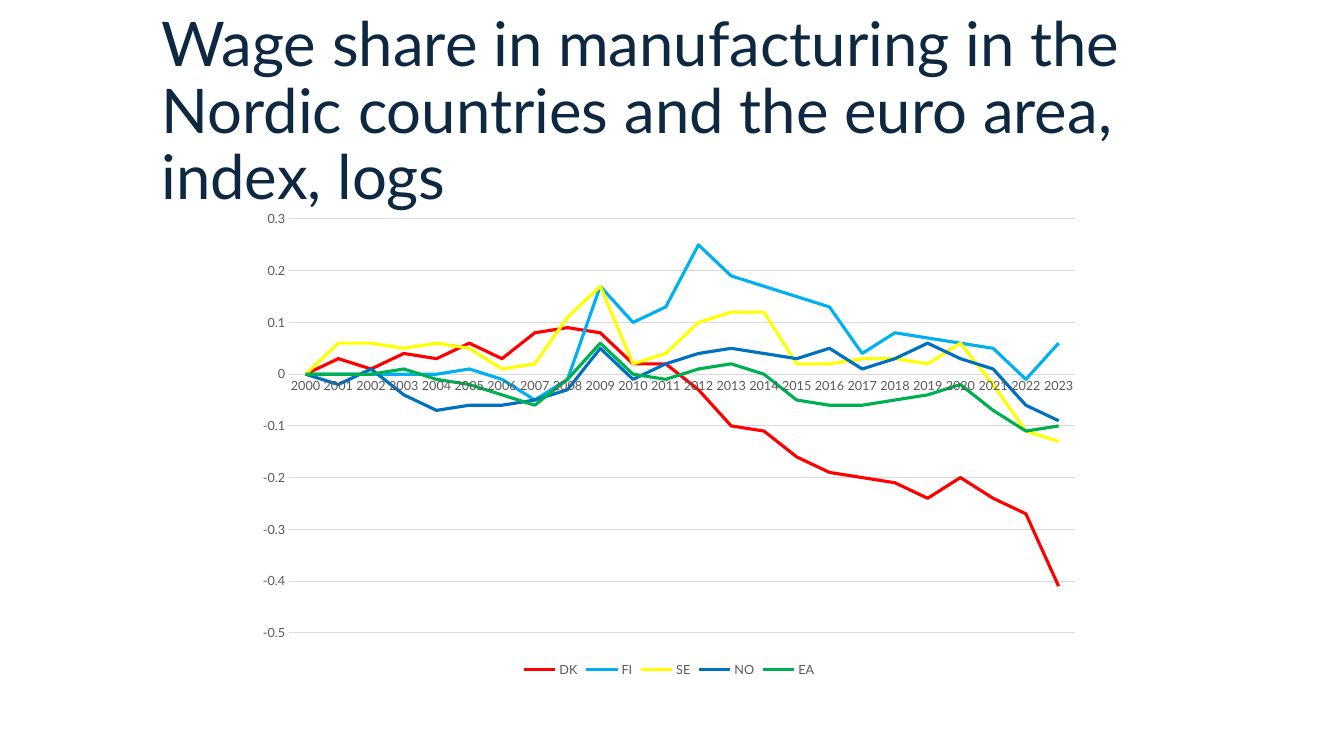
from pptx import Presentation
from pptx.chart import data
from pptx.dml.color import RGBColor
from pptx.enum import chart as kinds, text
from pptx.util import Inches, Pt

HEADING = "Wage share in manufacturing in the Nordic countries and the euro area, index, logs"
HEADING_BOX = (1.5, 0.4, 10.92, 1.45)
WAGE_BOX = (2.44, 2, 8.39, 4.76)
FONT = "Lato"
NAVY, GREY, PALE = "0E2841", "595959", "D9D9D9"

YEARS = [str(year) for year in range(2000, 2024)]
COUNTRIES = [
    ("DK", "FF0000", [0, 0.03, 0.01, 0.04, 0.03, 0.06, 0.03, 0.08, 0.09, 0.08, 0.02, 0.02,
                      -0.03, -0.1, -0.11, -0.16, -0.19, -0.2, -0.21, -0.24, -0.2, -0.24, -0.27, -0.41]),
    ("FI", "00B0F0", [0, 0, 0, 0, 0, 0.01, -0.01, -0.05, -0.01, 0.17, 0.1, 0.13,
                      0.25, 0.19, 0.17, 0.15, 0.13, 0.04, 0.08, 0.07, 0.06, 0.05, -0.01, 0.06]),
    ("SE", "FFFF00", [0, 0.06, 0.06, 0.05, 0.06, 0.05, 0.01, 0.02, 0.11, 0.17, 0.02, 0.04,
                      0.1, 0.12, 0.12, 0.02, 0.02, 0.03, 0.03, 0.02, 0.06, -0.02, -0.11, -0.13]),
    ("NO", "0070C0", [0, -0.02, 0.01, -0.04, -0.07, -0.06, -0.06, -0.05, -0.03, 0.05, -0.01, 0.02,
                      0.04, 0.05, 0.04, 0.03, 0.05, 0.01, 0.03, 0.06, 0.03, 0.01, -0.06, -0.09]),
    ("EA", "00B050", [0, 0, 0, 0.01, -0.01, -0.02, -0.04, -0.06, -0.01, 0.06, 0, -0.01,
                      0.01, 0.02, 0, -0.05, -0.06, -0.06, -0.05, -0.04, -0.02, -0.07, -0.11, -0.1]),
]


def style_font(font, size, color):
    font.name = FONT
    font.size = Pt(size)
    font.color.rgb = RGBColor.from_string(color)


def style_line(line, width, color):
    line.width = Pt(width)
    line.color.rgb = RGBColor.from_string(color)


def add_heading(slide):
    heading = slide.shapes.title
    heading.left, heading.top, heading.width, heading.height = map(Inches, HEADING_BOX)
    frame = heading.text_frame
    frame.text = HEADING
    frame.word_wrap = True
    frame.auto_size = text.MSO_AUTO_SIZE.NONE
    frame.vertical_anchor = text.MSO_ANCHOR.MIDDLE
    paragraph = frame.paragraphs[0]
    paragraph.alignment = text.PP_ALIGN.LEFT
    paragraph.line_spacing = 0.9
    style_font(paragraph.font, 44, NAVY)


def add_wage_shares(slide):
    shares = data.CategoryChartData()
    shares.categories = YEARS
    for country, _, values in COUNTRIES:
        shares.add_series(country, values)
    chart = slide.shapes.add_chart(
        kinds.XL_CHART_TYPE.LINE, *map(Inches, WAGE_BOX), shares).chart
    style_font(chart.font, 10, "000000")
    chart.has_title = False
    chart.has_legend = True
    chart.legend.position = kinds.XL_LEGEND_POSITION.BOTTOM
    chart.legend.include_in_layout = False
    style_font(chart.legend.font, 9, GREY)

    plot = chart.plots[0]
    plot.vary_by_categories = False
    for series, (_, color, _) in zip(plot.series, COUNTRIES):
        series.smooth = False
        series.marker.style = kinds.XL_MARKER_STYLE.NONE
        style_line(series.format.line, 2.25, color)

    years, index = chart.category_axis, chart.value_axis
    for axis in (years, index):
        axis.major_tick_mark = axis.minor_tick_mark = kinds.XL_TICK_MARK.NONE
        style_font(axis.tick_labels.font, 9, GREY)
    years.has_major_gridlines = False
    years.tick_labels.offset = 100
    years._element.txPr.bodyPr.set("rot", "-60000000")
    style_line(years.format.line, 0.75, PALE)
    index.minimum_scale, index.maximum_scale, index.major_unit = -0.5, 0.3, 0.1
    index.tick_labels.number_format = "General"
    index.tick_labels.number_format_is_linked = False
    index.format.line.fill.background()
    index.has_major_gridlines = True
    style_line(index.major_gridlines.format.line, 0.75, PALE)


def main():
    deck = Presentation()
    deck.slide_width, deck.slide_height = Inches(13.33), Inches(7.5)
    slide = deck.slides.add_slide(deck.slide_layouts[5])
    add_heading(slide)
    add_wage_shares(slide)
    deck.save("out.pptx")


if __name__ == "__main__":
    main()
